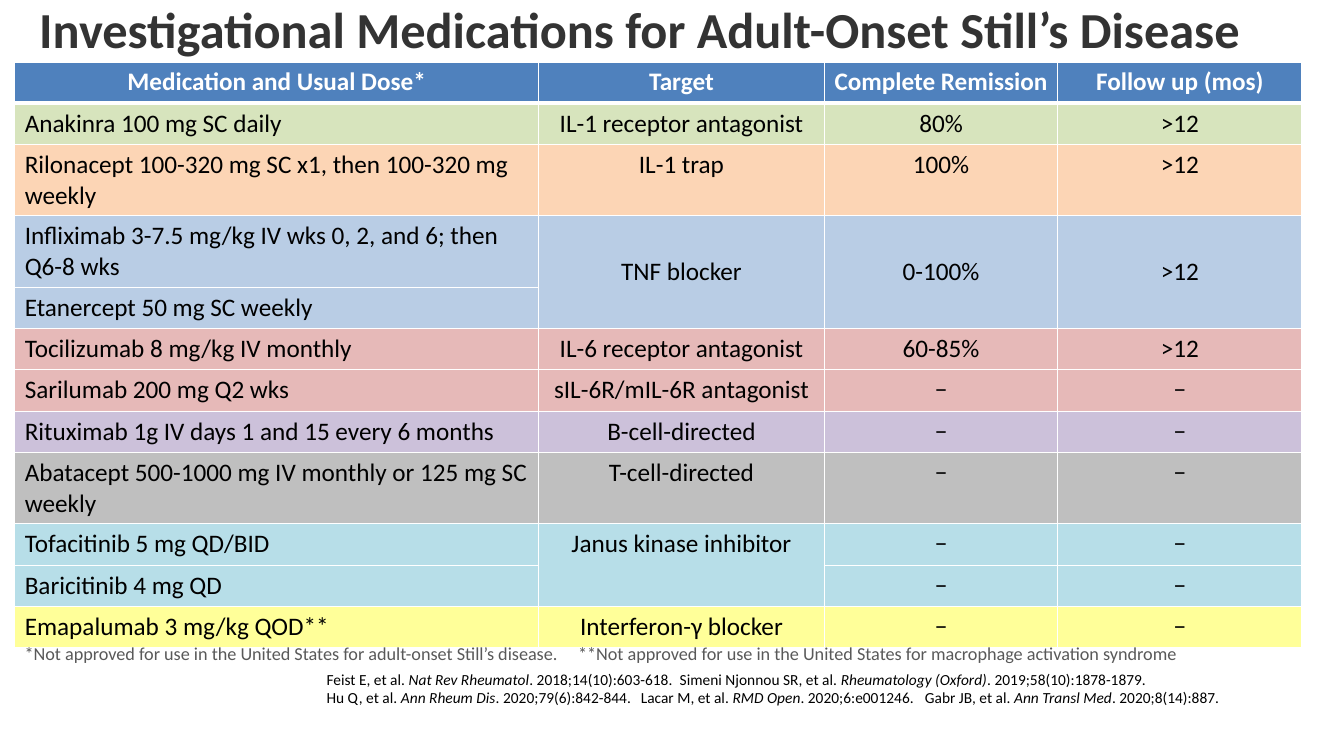
from lxml.etree import SubElement
from pptx import Presentation
from pptx.dml.color import RGBColor
from pptx.enum.text import MSO_ANCHOR, PP_ALIGN
from pptx.oxml.ns import qn
from pptx.util import Cm, Pt

COLORS = {
    "white": "FFFFFF", "black": "000000", "title": "333333", "note": "595959",
    "header": "4F81BD", "green": "D7E4BD", "orange": "FCD5B5", "blue": "B9CDE5",
    "red": "E6B9B8", "purple": "CCC1DA", "gray": "BFBFBF", "aqua": "B7DEE8",
    "yellow": "FFFF99",
}
FONT = "Calibri"
SINGLE_ROW, DOUBLE_ROW = 1.04, 1.8
COLUMN_WIDTHS = [13.21, 7.19, 5.89, 6.15]
MEDICATIONS = [
    ("header", SINGLE_ROW, ["Medication and Usual Dose*", "Target", "Complete Remission", "Follow up (mos)"]),
    ("green", SINGLE_ROW, ["Anakinra 100 mg SC daily", "IL-1 receptor antagonist", "80%", ">12"]),
    ("orange", DOUBLE_ROW, ["Rilonacept 100-320 mg SC x1, then 100-320 mg weekly", "IL-1 trap", "100%", ">12"]),
    ("blue", DOUBLE_ROW, ["Infliximab 3-7.5 mg/kg IV wks 0, 2, and 6; then Q6-8 wks", "TNF blocker", "0-100%", ">12"]),
    ("blue", SINGLE_ROW, ["Etanercept 50 mg SC weekly", "", "", ""]),
    ("red", SINGLE_ROW, ["Tocilizumab 8 mg/kg IV monthly", "IL-6 receptor antagonist", "60-85%", ">12"]),
    ("red", SINGLE_ROW, ["Sarilumab 200 mg Q2 wks", "sIL-6R/mIL-6R antagonist", "−", "−"]),
    ("purple", SINGLE_ROW, ["Rituximab 1g IV days 1 and 15 every 6 months", "B-cell-directed", "−", "−"]),
    ("gray", DOUBLE_ROW, ["Abatacept 500-1000 mg IV monthly or 125 mg SC weekly", "T-cell-directed", "−", "−"]),
    ("aqua", SINGLE_ROW, ["Tofacitinib 5 mg QD/BID", "Janus kinase inhibitor", "−", "−"]),
    ("aqua", SINGLE_ROW, ["Baricitinib 4 mg QD", "", "−", "−"]),
    ("yellow", SINGLE_ROW, ["Emapalumab 3 mg/kg QOD**", "Interferon-γ blocker", "−", "−"]),
]
TNF_ROW, JANUS_ROW = 3, 9
TITLE = [(["Investigational Medications for Adult-Onset Still’s Disease"], [])]
FOOTNOTES = [([
    "*Not approved for use in the United States for adult-onset Still’s disease.\t"
    "**Not approved for use in the United States for macrophage activation syndrome",
], [13.95])]
REFERENCES = [
    (["Feist E, et al. ", "Nat Rev Rheumatol", ". 2018;14(10):603-618.\tSimeni Njonnou SR, et al. ",
      "Rheumatology (Oxford)", ". 2019;58(10):1878-1879."], [8.9]),
    (["Hu Q, et al. ", "Ann Rheum Dis", ". 2020;79(6):842-844.\tLacar M, et al. ",
      "RMD Open", ". 2020;6:e001246.\tGabr JB, et al. ", "Ann Transl Med", ". 2020;8(14):887."],
     [7.92, 15.08]),
]


def rgb(name):
    return RGBColor.from_string(COLORS[name])


def style_font(para, size, color, bold=False):
    font = para.font
    font.name, font.size, font.bold = FONT, Pt(size), bold
    font.color.rgb = rgb(color)


def add_tab_stops(para, stops):
    tabs = SubElement(para._p.get_or_add_pPr(), qn("a:tabLst"))
    for stop in stops:
        SubElement(tabs, qn("a:tab"), pos=str(Cm(stop)), algn="l")


def add_text(page, place, lines, size, color, bold=False, spacing=None, anchor=MSO_ANCHOR.TOP):
    box = page.shapes.add_textbox(*(Cm(length) for length in place))
    frame = box.text_frame
    frame.word_wrap = True
    frame.vertical_anchor = anchor
    for index, (spans, stops) in enumerate(lines):
        para = frame.add_paragraph() if index else frame.paragraphs[0]
        if spacing:
            para.line_spacing = spacing
        if stops:
            add_tab_stops(para, stops)
        style_font(para, size, color, bold)
        for position, text in enumerate(spans):
            span = para.add_run()
            span.text = text
            if position % 2:
                span.font.italic = True


def add_borders(cell, top, bottom):
    properties = cell._tc.get_or_add_tcPr()
    for side, width in (("L", 1), ("R", 1), ("T", top), ("B", bottom)):
        line = SubElement(properties, qn(f"a:ln{side}"), w=str(Pt(width)))
        fill = SubElement(line, qn("a:solidFill"))
        SubElement(fill, qn("a:srgbClr"), val=COLORS["white"])


def fill_cell(cell, text, row, column, color):
    header = row == 0
    add_borders(cell, 3 if row == 1 else 1, 3 if header else 1)
    cell.fill.solid()
    cell.fill.fore_color.rgb = rgb(color)
    cell.text = text
    para = cell.text_frame.paragraphs[0]
    para.alignment = PP_ALIGN.CENTER if header or column else PP_ALIGN.LEFT
    style_font(para, 18, "white" if header else "black", header)


def add_medication_table(page):
    height = sum(row_height for _, row_height, _ in MEDICATIONS)
    frame = page.shapes.add_table(
        len(MEDICATIONS), len(COLUMN_WIDTHS),
        Cm(0.37), Cm(1.56), Cm(sum(COLUMN_WIDTHS)), Cm(height))
    table = frame.table
    table.horz_banding = False
    for column, width in enumerate(COLUMN_WIDTHS):
        table.columns[column].width = Cm(width)
    for row, (color, row_height, texts) in enumerate(MEDICATIONS):
        table.rows[row].height = Cm(row_height)
        for column, text in enumerate(texts):
            fill_cell(table.cell(row, column), text, row, column, color)
    for column in range(1, len(COLUMN_WIDTHS)):
        cell = table.cell(TNF_ROW, column)
        cell.merge(table.cell(TNF_ROW + 1, column))
        cell.vertical_anchor = MSO_ANCHOR.MIDDLE
    table.cell(JANUS_ROW, 1).merge(table.cell(JANUS_ROW + 1, 1))


def main():
    deck = Presentation()
    deck.slide_width, deck.slide_height = Cm(33.87), Cm(19.05)
    page = deck.slides.add_slide(deck.slide_layouts[6])
    add_text(page, (0.74, 0.18, 32.46, 1.27), TITLE, 36, "title", True, 0.9, MSO_ANCHOR.MIDDLE)
    add_medication_table(page)
    add_text(page, (7.98, 16.76, 23.34, 1.19), REFERENCES, 11, "black")
    add_text(page, (0.37, 16.13, 32.46, 0.76), FOOTNOTES, 13, "note", spacing=0.9)
    deck.save("out.pptx")


if __name__ == "__main__":
    main()
